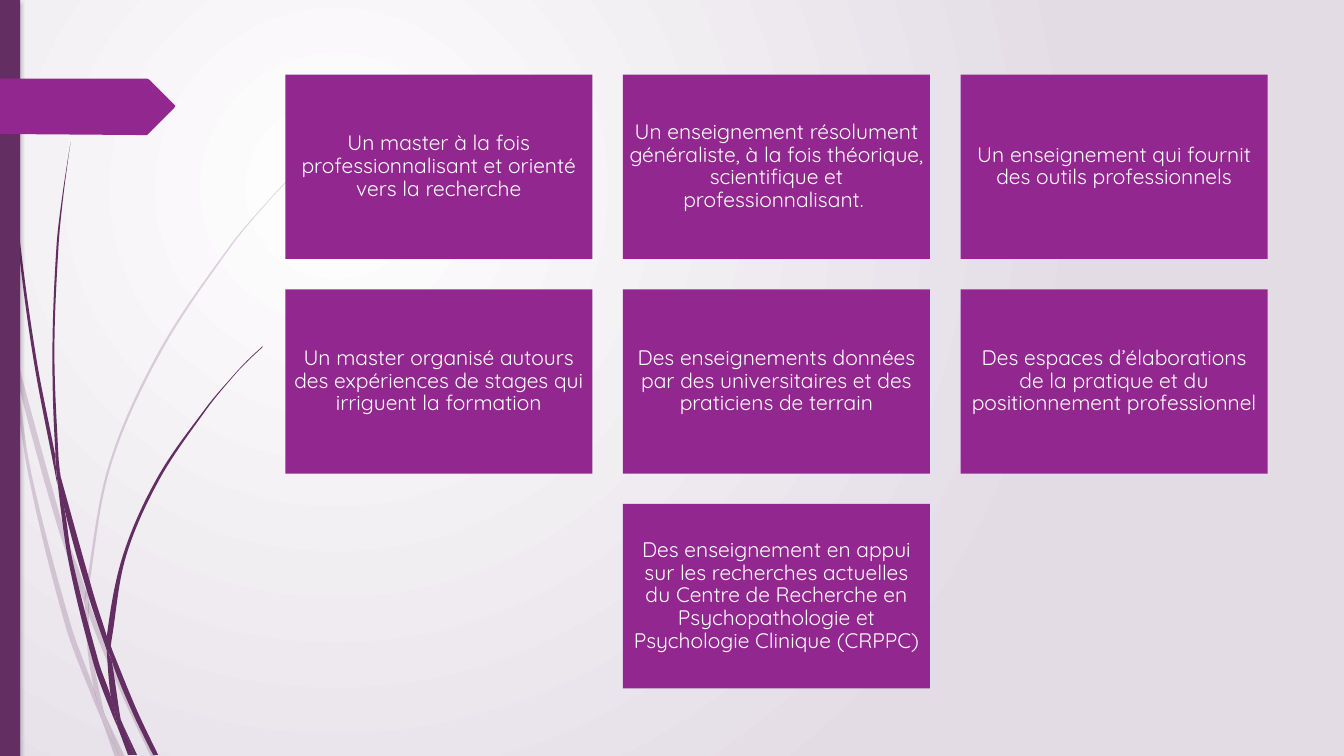
from math import hypot

from lxml import etree
from pptx import Presentation
from pptx.dml.color import RGBColor
from pptx.enum import shapes, text
from pptx.oxml import parse_xml
from pptx.oxml.ns import nsdecls, qn
from pptx.util import Pt

SCALE = 9144
WIDE, HIGH = 1333.33, 750
FONT = "Quicksand"
HUES = {"plum": "632E62", "violet": "92278F", "white": "FFFFFF", "mist": "E3DCE5"}
CARDS = [
    ("Un master à la fois professionnalisant et orienté vers la recherche", 0, 0),
    ("Un enseignement résolument généraliste, à la fois théorique, scientifique et "
     "professionnalisant. ", 1, 0),
    ("Un enseignement qui fournit des outils professionnels", 2, 0),
    ("Un master organisé autours des expériences de stages qui irriguent la formation", 0, 1),
    ("Des enseignements données par des universitaires et des praticiens de terrain", 1, 1),
    ("Des espaces d’élaborations de la pratique et du positionnement professionnel", 2, 1),
    ("Des enseignement en appui sur les recherches actuelles du Centre de Recherche "
     "en Psychopathologie et Psychologie Clinique (CRPPC)", 1, 2),
]
PALE = [
    [(11, 350), (8, 322), (0, 282), (0, 299), (10, 344)],
    [(57, 522), (84, 599), (85, 586), (62, 520), (14, 345), (17, 376)],
    [(92, 607), (88, 596), (88, 610), (123, 694), (150, 751), (155, 751), (127, 691)],
    [(119, 751), (124, 751), (105, 711)],
    [(93, 683), (70, 619), (31, 469), (17, 376), (11, 350), (28, 470), (65, 621),
     (92, 693), (101, 714), (99, 707)],
    [(84, 599), (87, 646), (93, 683), (96, 692), (105, 711), (103, 706), (91, 646),
     (88, 610), (88, 608)],
    [(88, 584), (110, 462), (160, 349), (229, 245), (268, 198), (290, 175), (312, 153),
     (289, 175), (268, 197), (228, 244), (158, 348), (108, 461), (85, 584), (85, 586),
     (88, 596)],
    [(101, 714), (114, 751), (119, 751)],
    [(88, 608), (88, 610), (88, 596), (85, 586), (84, 599)],
    [(96, 692), (93, 683), (99, 707), (101, 714), (119, 751), (105, 711)],
]
DARK = [
    [(7, 110), (17, 233), (33, 355), (56, 476), (57, 481), (55, 457), (55, 453), (36, 355),
     (19, 232), (8, 109), (5, 48), (4, 0), (3, 0), (4, 48)],
    [(88, 592), (106, 645), (106, 633), (106, 631), (93, 590), (60, 472), (64, 505)],
    [(113, 649), (110, 641), (111, 656), (132, 708), (152, 749), (157, 749), (136, 705)],
    [(110, 691), (98, 657), (72, 556), (64, 505), (57, 477), (68, 557), (93, 659),
     (111, 708), (117, 722), (116, 717)],
    [(60, 472), (58, 453), (54, 349), (58, 245), (63, 193), (70, 141), (62, 193), (56, 245),
     (52, 349), (55, 449), (60, 471)],
    [(133, 749), (136, 749), (122, 719)],
    [(57, 477), (64, 505), (60, 472), (55, 449), (55, 453)],
    [(111, 633), (125, 552), (158, 476), (205, 406), (231, 374), (245, 359), (261, 344),
     (260, 344), (245, 358), (231, 373), (204, 405), (156, 474), (122, 551), (106, 631),
     (110, 641)],
    [(117, 722), (127, 749), (131, 749)],
    [(106, 645), (110, 691), (116, 706), (122, 719), (120, 715), (111, 656), (109, 651)],
    [(106, 645), (109, 650), (111, 656), (110, 641), (106, 631), (106, 633)],
    [(116, 706), (110, 691), (116, 717), (117, 722), (130, 749), (133, 749), (122, 719)],
]
TAB = [(174, 105), (173, 107), (148, 132), (146, 134), (136, 134), (0, 133),
       (0, 78), (136, 78), (146, 78), (148, 79), (173, 104)]


def px(num):
    return round(num * SCALE)


def rgb(name):
    return RGBColor.from_string(HUES[name])


def paint(shape, hue, alpha=100):
    shape.shadow.inherit = False
    shape.fill.solid()
    shape.fill.fore_color.rgb = rgb(hue)
    shape.line.fill.background()
    if alpha < 100:
        tint = shape._element.spPr.find(".//" + qn("a:srgbClr"))
        etree.SubElement(tint, qn("a:alpha")).set("val", str(alpha * 1000))
    return shape


def block(slide, left, top, wide, high, hue):
    kind = shapes.MSO_SHAPE.RECTANGLE
    shape = slide.shapes.add_shape(kind, px(left), px(top), px(wide), px(high))
    return paint(shape, hue)


def write(shape, words, size=15, hue="white", inset=6.25):
    frame = shape.text_frame
    frame.word_wrap = True
    frame.vertical_anchor = text.MSO_ANCHOR.MIDDLE
    frame.margin_left = frame.margin_right = px(inset)
    frame.margin_top = frame.margin_bottom = px(inset)
    para = frame.paragraphs[0]
    para.alignment = text.PP_ALIGN.CENTER
    para.line_spacing = 0.9
    run = para.add_run()
    run.text = words
    run.font.name = FONT
    run.font.size = Pt(size)
    run.font.color.rgb = rgb(hue)


def form(slide, rim, hue, alpha=100):
    draft = slide.shapes.build_freeform(*map(px, rim[0]), scale=1.0)
    draft.add_line_segments([(px(x), px(y)) for x, y in rim[1:] + rim[:1]], close=True)
    return paint(draft.convert_to_shape(), hue, alpha)


def slope(prev, spot, succ):
    ax, ay = spot[0] - prev[0], spot[1] - prev[1]
    bx, by = succ[0] - spot[0], succ[1] - spot[1]
    if ax * bx + ay * by < 0.8 * hypot(ax, ay) * hypot(bx, by):
        return 0, 0
    dx, dy = ax + bx, ay + by
    size = hypot(dx, dy)
    return dx / size, dy / size


def bend(shape, rim):
    count = len(rim)
    left, top = min(x for x, y in rim), min(y for x, y in rim)
    slopes = [slope(rim[i - 1], rim[i], rim[(i + 1) % count]) for i in range(count)]
    for i, line in enumerate(list(shape._element.iter(qn("a:lnTo")))):
        j = (i + 1) % count
        (x, y), (u, v) = rim[i], rim[j]
        reach = hypot(u - x, v - y) / 3
        spots = [(x + slopes[i][0] * reach, y + slopes[i][1] * reach),
                 (u - slopes[j][0] * reach, v - slopes[j][1] * reach), (u, v)]
        curve = etree.Element(qn("a:cubicBezTo"))
        for h, k in spots:
            point = etree.SubElement(curve, qn("a:pt"))
            point.set("x", str(px(h - left)))
            point.set("y", str(px(k - top)))
        line.getparent().replace(line, curve)


def glow(slide):
    fill = slide.background.fill
    fill.gradient()
    for stop, hue in zip(fill.gradient_stops, ("white", "mist")):
        stop.color.rgb = rgb(hue)
    line = slide._element.find(".//" + qn("a:lin"))
    line.getparent().replace(line, parse_xml(
        f'<a:path {nsdecls("a")} path="circle">'
        '<a:fillToRect l="25000" t="25000" r="75000" b="75000"/></a:path>'))


def shade(shape):
    shape._element.spPr.find(qn("a:effectLst")).append(parse_xml(
        f'<a:outerShdw {nsdecls("a")} blurRad="38100" dist="25400" dir="5400000">'
        '<a:srgbClr val="000000"><a:alpha val="25000"/></a:srgbClr></a:outerShdw>'))


def main():
    deck = Presentation()
    deck.slide_width, deck.slide_height = px(WIDE), px(HIGH)
    slide = deck.slides.add_slide(deck.slide_layouts[6])
    glow(slide)
    for stalks, alpha in ((PALE, 20), (DARK, 100)):
        for rim in stalks:
            bend(form(slide, rim, "plum", alpha), rim)
    shade(block(slide, 0, 0, 20, HIGH, "plum"))
    form(slide, TAB, "violet")
    for words, col, row in CARDS:
        card = block(slide, 283 + 335 * col, 74 + 213 * row, 304.6, 183, "violet")
        write(card, words)
    deck.save("out.pptx")


if __name__ == "__main__":
    main()
